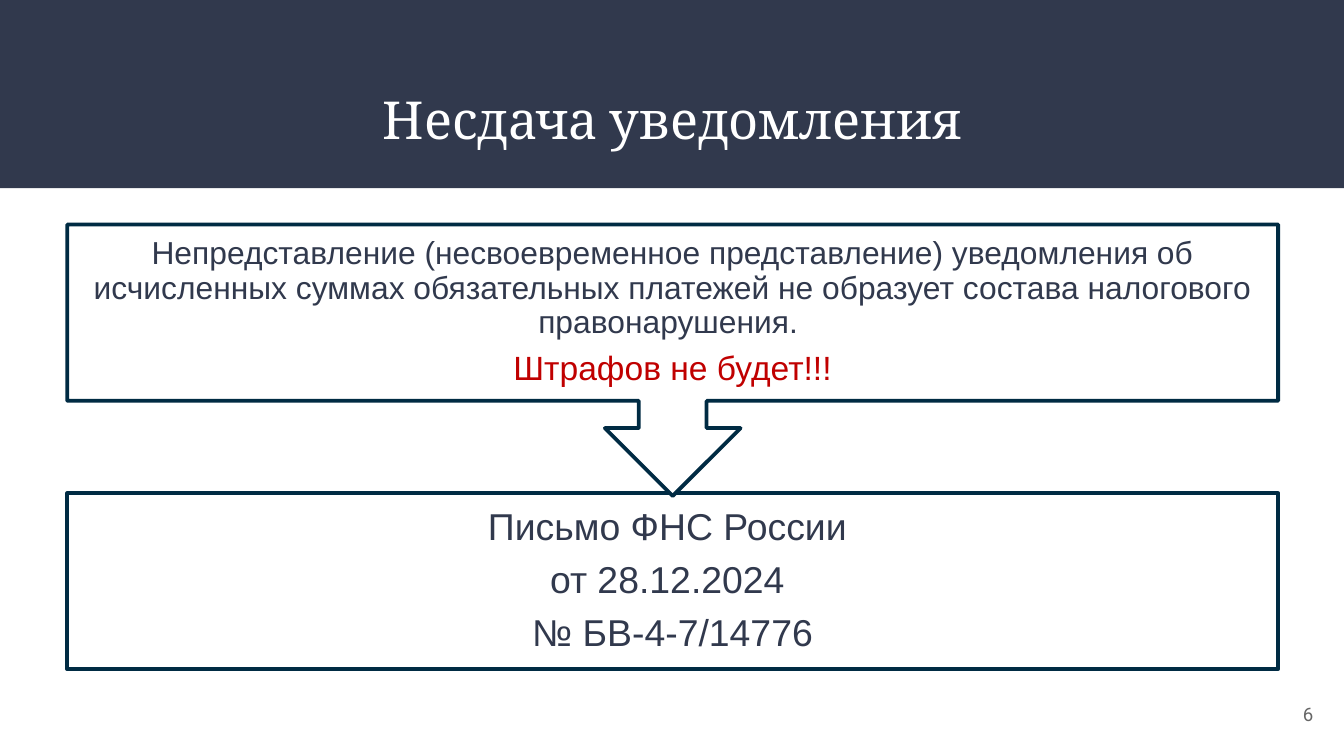
from pptx import Presentation
from pptx.dml.color import RGBColor
from pptx.enum.shapes import MSO_SHAPE
from pptx.enum.text import MSO_ANCHOR, PP_ALIGN
from pptx.util import Inches, Pt

RECT, CALLOUT = MSO_SHAPE.RECTANGLE, MSO_SHAPE.UP_ARROW_CALLOUT
TOP, MIDDLE = MSO_ANCHOR.TOP, MSO_ANCHOR.MIDDLE
CENTER, RIGHT = PP_ALIGN.CENTER, PP_ALIGN.RIGHT

COLORS = {"navy": "31394D", "outline": "002B43", "white": "FFFFFF",
          "red": "C00000", "gray": "666666"}

# Content: paragraphs as (text, size, color)
TITLE = [("Несдача уведомления", 28, "white")]
PAGE = [("6", 10, "gray")]
RULE = [
    ("Непредставление (несвоевременное представление) уведомления об "
     "исчисленных суммах обязательных платежей не образует состава "
     "налогового правонарушения. ", 17, "navy"),
    ("Штрафов не будет!!!", 18, "red"),
]
LETTER = [(text, 20, "navy") for text in
          ("Письмо ФНС России ", "от 28.12.2024 ", "№ БВ-4-7/14776")]

# Layout in inches
LEFT, WIDTH, BOX_HEIGHT = 0.5, 9.01, 1.31
RULE_TOP, LETTER_TOP, CALLOUT_HEIGHT = 1.67, 3.67, 2.02


def rgb(name):
    return RGBColor.from_string(COLORS[name])


def add_box(s, kind, box, fill, line=None):
    sp = s.shapes.add_shape(kind, *map(Inches, box))
    sp.shadow.inherit = False
    sp.fill.solid()
    sp.fill.fore_color.rgb = rgb(fill)
    if line:
        sp.line.color.rgb = rgb(line)
        sp.line.width = Pt(2)
    else:
        sp.line.fill.background()
    return sp


def add_text(s, box, paragraphs, font="Arial", align=CENTER, anchor=MIDDLE,
             inset=0.1, spacing=1.0, after=0):
    tf = s.shapes.add_textbox(*map(Inches, box)).text_frame
    tf.word_wrap = True
    tf.vertical_anchor = anchor
    tf.margin_left = tf.margin_right = Inches(inset)
    tf.margin_top = tf.margin_bottom = Inches(inset)
    for i, (text, size, color) in enumerate(paragraphs):
        p = tf.add_paragraph() if i else tf.paragraphs[0]
        p.text = text
        p.alignment = align
        p.line_spacing = spacing
        p.space_after = Pt(after)
        p.font.name, p.font.size = font, Pt(size)
        p.font.color.rgb = rgb(color)


# Widescreen slide, 16:9
prs = Presentation()
prs.slide_width = Inches(10)
prs.slide_height = prs.slide_width * 9 // 16
s = prs.slides.add_slide(prs.slide_layouts[6])

# Header band, title and page number
add_box(s, RECT, (0, 0, 10, 1.4), "navy")
add_text(s, (0.34, 0.55, 9.32, 0.68), TITLE, "Cambria", anchor=TOP)
add_text(s, (9.27, 5.1, 0.6, 0.43), PAGE, "Roboto", RIGHT)

# Letter box
letter_box = (LEFT, LETTER_TOP, WIDTH, BOX_HEIGHT)
add_box(s, RECT, letter_box, "white", "outline")
add_text(s, letter_box, LETTER, inset=0.16, spacing=0.9, after=7)

# Rule box with its arrow pointing down to the letter
callout = add_box(s, CALLOUT, (LEFT, RULE_TOP, WIDTH, CALLOUT_HEIGHT),
                  "white", "outline")
callout.rotation = 180
add_text(s, (LEFT, RULE_TOP, WIDTH, BOX_HEIGHT), RULE,
         inset=0.13, spacing=0.9, after=6)

prs.save("out.pptx")
